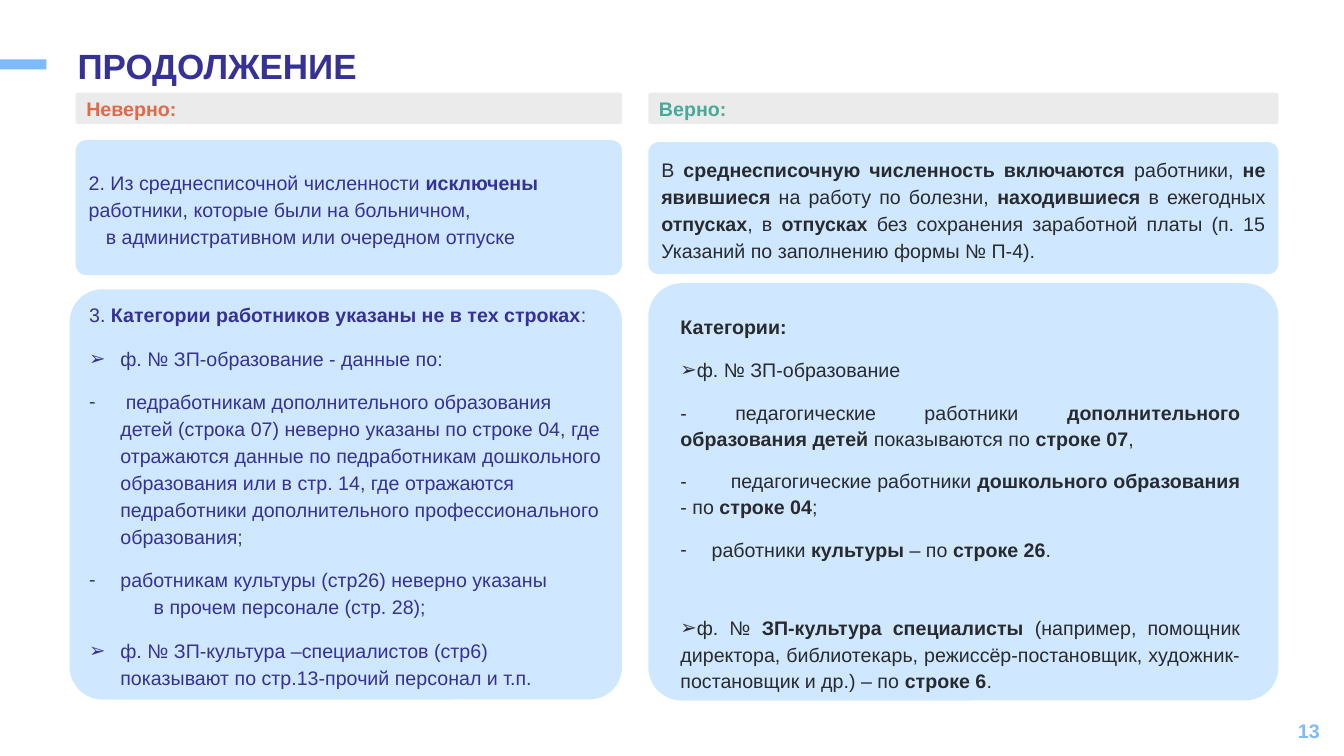
from lxml import etree
from pptx import Presentation
from pptx import util as u
from pptx.dml.color import RGBColor
from pptx.enum import shapes, text
from pptx.oxml.ns import qn

COLORS = {
    "accent": "7DBBFC", "navy": "363194", "dark": "282A2E", "wrong": "E36846",
    "right": "46AA98", "header": "EBEBEB", "panel": "CFE8FF",
}
FONT = "Arial"
JUSTIFY = text.PP_ALIGN.JUSTIFY
LEFT_X, LEFT_WIDTH = 0.75, 5.42
RIGHT_X, RIGHT_WIDTH = 6.43, 6.25
HANG = 0.31


def color(name):
    return RGBColor.from_string(COLORS[name])


def add_text(frame, content, *, fill, size=14, align=None, spacing=None,
             before=6, after=6, margin=0, indent=0, bullet=None, tab=None, first=False):
    """Add one paragraph; parts between ** marks are bold."""
    paragraph = frame.paragraphs[0] if first else frame.add_paragraph()
    properties = paragraph._p.get_or_add_pPr()
    properties.set("marL", str(u.Inches(margin)))
    properties.set("indent", str(u.Inches(indent)))
    if bullet:
        etree.SubElement(properties, qn("a:buFont")).set("typeface", FONT)
        etree.SubElement(properties, qn("a:buChar")).set("char", bullet)
    else:
        etree.SubElement(properties, qn("a:buNone"))
    if tab:
        stop = etree.SubElement(etree.SubElement(properties, qn("a:tabLst")), qn("a:tab"))
        stop.set("pos", str(u.Inches(tab)))
        stop.set("algn", "l")
    paragraph.alignment = align or text.PP_ALIGN.LEFT
    paragraph.line_spacing = spacing
    paragraph.space_before = u.Pt(0 if first else before)
    paragraph.space_after = u.Pt(after)
    for number, part in enumerate(content.split("**")):
        if part:
            run = paragraph.add_run()
            run.text = part
            run.font.name = FONT
            run.font.size = u.Pt(size)
            run.font.bold = number % 2 == 1
            run.font.color.rgb = color(fill)


class SlideBuilder:
    def __init__(self, slide):
        self.slide = slide

    def block(self, left, top, width, height, fill, radius=None):
        kind = shapes.MSO_SHAPE.ROUNDED_RECTANGLE if radius else shapes.MSO_SHAPE.RECTANGLE
        shape = self.slide.shapes.add_shape(
            kind, u.Inches(left), u.Inches(top), u.Inches(width), u.Inches(height))
        if radius:
            shape.adjustments[0] = radius
        shape.shadow.inherit = False
        shape.fill.solid()
        shape.fill.fore_color.rgb = color(fill)
        shape.line.fill.background()
        return shape

    def fill_frame(self, frame, paragraphs, anchor, **style):
        frame.word_wrap = True
        frame.vertical_anchor = anchor
        for number, (content, extra) in enumerate(paragraphs):
            add_text(frame, content, first=number == 0, **{**style, **extra})

    def panel(self, left, top, width, height, paragraphs, background="panel", **style):
        shape = self.block(left, top, width, height, background, radius=0.08)
        self.fill_frame(shape.text_frame, paragraphs, text.MSO_ANCHOR.MIDDLE, **style)

    def label(self, left, top, width, height, paragraphs,
              anchor=text.MSO_ANCHOR.TOP, inset=(0.1, 0.05), **style):
        box = self.slide.shapes.add_textbox(
            u.Inches(left), u.Inches(top), u.Inches(width), u.Inches(height))
        frame = box.text_frame
        frame.margin_left = frame.margin_right = u.Inches(inset[0])
        frame.margin_top = frame.margin_bottom = u.Inches(inset[1])
        self.fill_frame(frame, paragraphs, anchor, **style)


def main():
    presentation = Presentation()
    presentation.slide_width = u.Inches(13.33)
    presentation.slide_height = u.Inches(7.5)
    builder = SlideBuilder(presentation.slides.add_slide(presentation.slide_layouts[6]))

    builder.block(0, 0.59, 0.46, 0.1, "accent")
    builder.label(10.2, 7.05, 3, 0.4, [("**13**", {})], text.MSO_ANCHOR.MIDDLE,
                  (0.11, 0.06), fill="accent", align=text.PP_ALIGN.RIGHT, after=0)
    builder.label(0.66, 0.43, 8.86, 0.57, [("**ПРОДОЛЖЕНИЕ**", {})],
                  inset=(0.11, 0.06), fill="navy", size=25, spacing=0.9, after=0)

    for left, width, heading, fill in (
        (LEFT_X, LEFT_WIDTH, "**Неверно:**", "wrong"),
        (RIGHT_X, RIGHT_WIDTH, "**Верно:**", "right"),
    ):
        builder.panel(left, 0.92, width, 0.31, [(heading, {})], "header", fill=fill, after=0)

    builder.panel(LEFT_X, 1.39, LEFT_WIDTH, 1.34, [
        ("2. Из среднесписочной численности **исключены** работники, "
         "которые были на больничном,", {"after": 0}),
        ("в административном или очередном отпуске", {"before": 0, "margin": 0.17}),
    ], fill="navy", spacing=1.15)
    builder.panel(RIGHT_X, 1.41, RIGHT_WIDTH, 1.31, [
        ("В **среднесписочную численность включаются** работники, **не явившиеся** "
         "на работу по болезни, **находившиеся** в ежегодных **отпусках**, в **отпусках** "
         "без сохранения заработной платы (п. 15 Указаний по заполнению формы № П-4).", {}),
    ], fill="dark", spacing=1.15, align=JUSTIFY)

    arrow = {"bullet": "➢", "margin": HANG, "indent": -HANG}
    dash = {**arrow, "bullet": "-"}
    builder.panel(0.69, 2.87, 5.48, 4.07, [
        ("3. **Категории работников указаны не в тех строках**:", {}),
        ("ф. № ЗП-образование - данные по:", arrow),
        (" педработникам дополнительного образования детей (строка 07) неверно указаны "
         "по строке 04, где отражаются данные по педработникам дошкольного образования "
         "или в стр. 14, где отражаются педработники дополнительного профессионального "
         "образования;", dash),
        ("работникам культуры (стр26) неверно указаны", {**dash, "after": 0}),
        ("в прочем персонале (стр. 28);", {"before": 0, "margin": 0.64}),
        ("ф. № ЗП-культура –специалистов (стр6) показывают по стр.13-прочий персонал "
         "и т.п.", arrow),
    ], fill="navy", spacing=1.14)

    flush_arrow = {**arrow, "margin": 0, "spacing": 1.13}
    builder.block(RIGHT_X, 2.81, RIGHT_WIDTH, 4.14, "panel", radius=0.08)
    builder.label(6.65, 3.04, 5.75, 4, [
        ("**Категории:**", {"spacing": 1.13}),
        ("ф. № ЗП-образование", flush_arrow),
        ("- педагогические работники **дополнительного образования детей** "
         "показываются по **строке 07**,", {}),
        ("-\tпедагогические работники **дошкольного образования** - по **строке 04**;",
         {"tab": 0.45}),
        ("работники **культуры** – по **строке 26**.", dash),
        ("ф. № **ЗП-культура специалисты** (например, помощник директора, библиотекарь, "
         "режиссёр-постановщик, художник-постановщик и др.) – по **строке 6**.",
         {**flush_arrow, "before": 31}),
    ], fill="dark", spacing=1.1, align=JUSTIFY)

    presentation.save("out.pptx")


if __name__ == "__main__":
    main()
